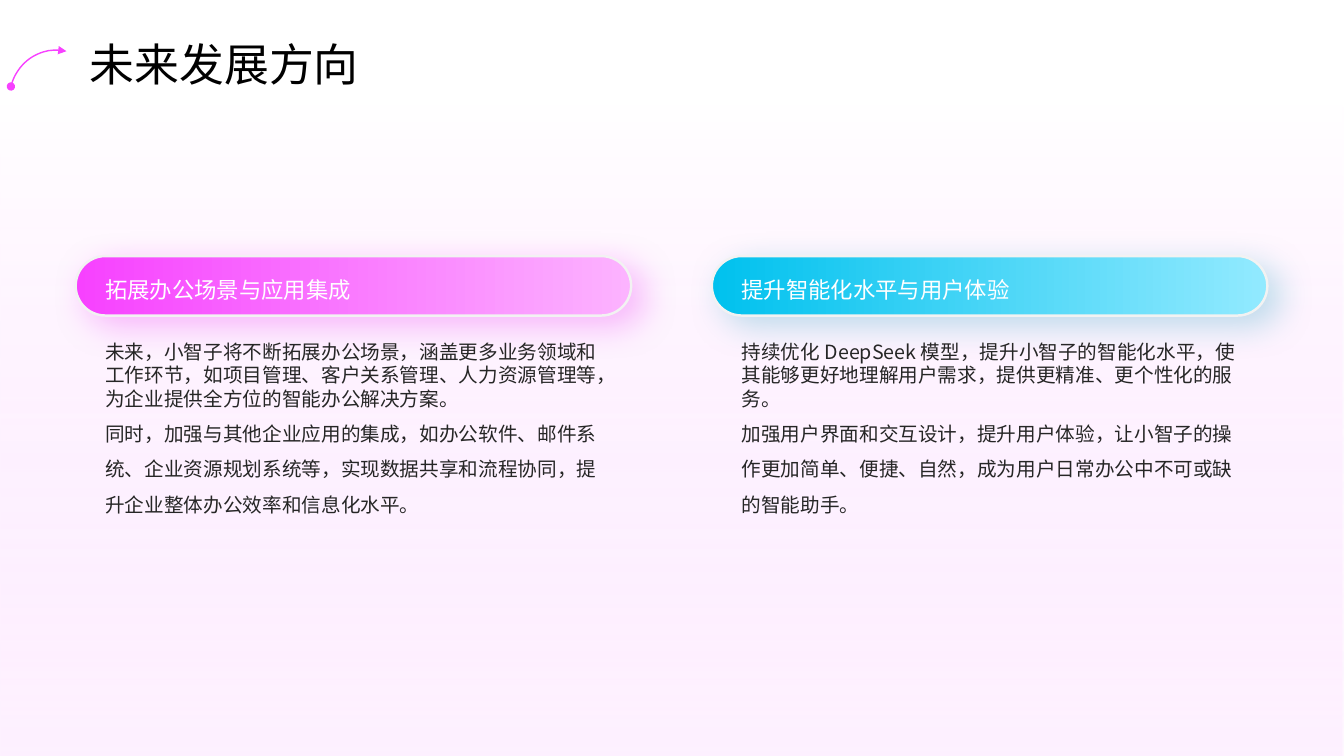
from lxml.etree import SubElement
from pptx import Presentation
from pptx.dml.color import RGBColor as RGB
from pptx.enum.shapes import MSO_SHAPE as SHAPE
from pptx.enum.text import MSO_ANCHOR as ANCHOR
from pptx.oxml.ns import qn
from pptx.util import Inches, Pt

FONT = "Noto Sans CJK SC"
COLORS = {
    "white": "FFFFFF", "black": "000000", "body": "262626", "rim": "F2F2F2",
    "haze": "FDD9FF", "magenta": "F741FF", "pink": "FCB3FF", "magenta_glow": "E600F0",
    "cyan": "00C1EE", "sky": "92EAFF", "cyan_glow": "0091B2",
}
TITLE = {"size": Pt(32), "color": "black"}
HEADING = {"size": Pt(16), "color": "white"}
BODY = {"size": Pt(14), "color": "body"}

COLUMNS = [
    {"heading": "拓展办公场景与应用集成",
     "body": ["未来，小智子将不断拓展办公场景，涵盖更多业务领域和工作环节，如项目管理、客户关系管理、"
              "人力资源管理等，为企业提供全方位的智能办公解决方案。",
              "同时，加强与其他企业应用的集成，如办公软件、邮件系统、企业资源规划系统等，"
              "实现数据共享和流程协同，提升企业整体办公效率和信息化水平。"],
     "colors": ("magenta", "pink"), "glow": "magenta_glow"},
    {"heading": "提升智能化水平与用户体验",
     "body": ["持续优化 DeepSeek 模型，提升小智子的智能化水平，使其能够更好地理解用户需求，"
              "提供更精准、更个性化的服务。",
              "加强用户界面和交互设计，提升用户体验，让小智子的操作更加简单、便捷、自然，"
              "成为用户日常办公中不可或缺的智能助手。"],
     "colors": ("cyan", "sky"), "glow": "cyan_glow"},
]


def rgb(name):
    return RGB.from_string(COLORS[name])


def add_shape(s, kind, x, y, w, h):
    sp = s.shapes.add_shape(kind, Inches(x), Inches(y), Inches(w), Inches(h))
    sp.shadow.inherit = False
    return sp


def fill_gradient(sp, names, start=0, angle=0):
    sp.fill.gradient()
    sp.fill.gradient_angle = angle
    for stop, name, position in zip(sp.fill.gradient_stops, names, (start, 1)):
        stop.color.rgb = rgb(name)
        stop.position = position


def set_alpha(clr, percent):
    SubElement(clr, qn("a:alpha"), val=str(percent * 1000))


def add_glow(sp, name):
    """Soft coloured shadow, down and to the right."""
    effects = sp._element.spPr.find(qn("a:effectLst"))
    shadow = SubElement(effects, qn("a:outerShdw"), blurRad=str(Pt(25)), dist=str(Pt(10)),
                        dir=str(40 * 60000), algn="ctr", rotWithShape="0")
    set_alpha(SubElement(shadow, qn("a:srgbClr"), val=COLORS[name]), 25)


def add_text(s, x, y, w, h, lines, style, anchor=ANCHOR.MIDDLE):
    """Each line is a paragraph given as (text, line spacing)."""
    tf = s.shapes.add_textbox(Inches(x), Inches(y), Inches(w), Inches(h)).text_frame
    frame = {"word_wrap": True, "vertical_anchor": anchor, "margin_left": 0,
             "margin_right": 0, "margin_top": 0, "margin_bottom": 0}
    for key, value in frame.items():
        setattr(tf, key, value)
    for i, (text, spacing) in enumerate(lines):
        p = tf.add_paragraph() if i else tf.paragraphs[0]
        p.line_spacing = spacing
        r = p.add_run()
        r.text = text
        r.font.size, r.font.name = style["size"], FONT
        r.font.color.rgb = rgb(style["color"])
        SubElement(r._r.rPr, qn("a:ea"), typeface=FONT)


def add_background(s, w, h):
    sp = add_shape(s, SHAPE.RECTANGLE, 0, 0, w, h)
    fill_gradient(sp, ("white", "haze"), start=0.13, angle=270)
    sp.line.fill.background()
    set_alpha(sp._element.spPr.findall(".//" + qn("a:srgbClr"))[-1], 35)


def add_title(s, x, y, w, h, text):
    add_text(s, x, y, w, h, [(text, 1.5)], TITLE)
    arc = add_shape(s, SHAPE.ARC, x - 0.79, y + 0.23, 0.99, 1.09)
    arc.adjustments[0], arc.adjustments[1] = 143.38, 189.65
    arc.rotation = 336
    arc._element.spPr.xfrm.set("flipH", "1")
    arc.fill.background()
    arc.line.color.rgb = rgb("magenta")
    arc.line.width = Pt(1)
    ln = arc.line._get_or_add_ln()
    for tag, kind in (("a:headEnd", "triangle"), ("a:tailEnd", "oval")):
        SubElement(ln, qn(tag), type=kind)


def add_column(s, x, y, w, column):
    """Glowing pill heading with two paragraphs below it."""
    pill = add_shape(s, SHAPE.ROUNDED_RECTANGLE, x, y, w, 0.59)
    pill.adjustments[0] = 0.5
    fill_gradient(pill, column["colors"])
    pill.line.color.rgb = rgb("rim")
    pill.line.width = Pt(1.75)
    add_glow(pill, column["glow"])
    inset = 0.295
    text_w = w - 2 * inset
    add_text(s, x + inset, y + 0.1, text_w, 0.39, [(column["heading"], 1.3)], HEADING)
    add_text(s, x + inset, y + 0.83, text_w, 2.07,
             zip(column["body"], (1.0, 1.5)), BODY, ANCHOR.TOP)


def main():
    prs = Presentation()
    prs.slide_width, prs.slide_height = Inches(13.33), Inches(7.5)
    s = prs.slides.add_slide(prs.slide_layouts[6])
    add_background(s, 13.33, 7.5)
    for i, column in enumerate(COLUMNS):
        add_column(s, 0.75 + i * 6.31, 2.54, 5.51, column)
    add_title(s, 0.89, 0.26, 8.51, 0.47, "未来发展方向")
    prs.save("out.pptx")


if __name__ == "__main__":
    main()
